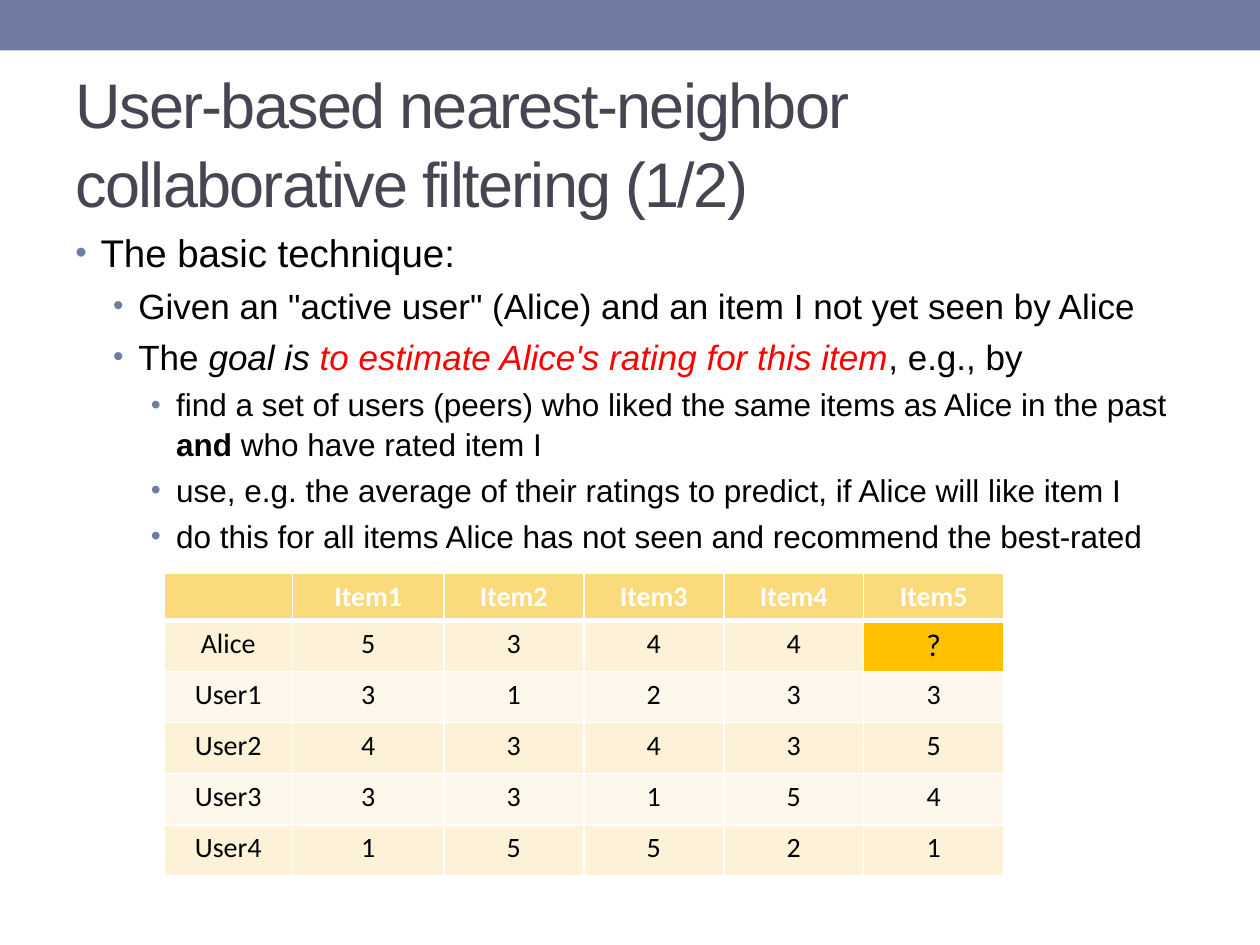
from lxml import etree
from pptx import Presentation
from pptx.dml.color import RGBColor
from pptx.enum import shapes, text
from pptx.oxml import ns
from pptx.util import Pt

ACCENT = "727CA3"
BLACK = "000000"
WHITE = "FFFFFF"
RED = "FF0000"
HEADER, BAND_DARK, BAND_LIGHT, HIGHLIGHT = "FADA7A", "FDF1D7", "FEF8EC", "FFC000"

SIZES = [22, 20, 18]
INDENTS = [14.4, 36, 57.6]
BULLET_SIZES = [85, 85, 90]
BULLETS = [
    (0, [("The basic technique:", {})]),
    (1, [('Given an "active user" (Alice) and an item I not yet seen by Alice', {})]),
    (1, [("The ", {}), ("goal is ", {"italic": True}),
         ("to estimate Alice's rating for this item", {"italic": True, "color": RED}),
         (", e.g., by", {})]),
    (2, [("find a set of users (peers) who liked the same items as Alice in the past ", {}),
         ("and ", {"bold": True}), ("who have rated item I", {})]),
    (2, [("use, e.g. the average of their ratings to predict, if Alice will like item I", {})]),
    (2, [("do this for all items Alice has not seen and recommend the best-rated", {})]),
]
RATINGS = [
    ["", "Item1", "Item2", "Item3", "Item4", "Item5"],
    ["Alice", "5", "3", "4", "4", "?"],
    ["User1", "3", "1", "2", "3", "3"],
    ["User2", "4", "3", "4", "3", "5"],
    ["User3", "3", "3", "1", "5", "4"],
    ["User4", "1", "5", "5", "2", "1"],
]
COLUMN_WIDTHS = [73.6, 86.4, 80, 80, 80, 80]
ROW_HEIGHTS = [27] + [29.2] * 5


def rgb(value):
    return RGBColor.from_string(value)


def sub(parent, tag, **attrs):
    return etree.SubElement(parent, ns.qn(tag), attrs)


def add_text(p, content, size=18, font="Arial", color=BLACK, bold=False,
             italic=False, spacing=None):
    r = p.add_run()
    r.text = content
    r.font.size = Pt(size)
    r.font.name = font
    r.font.bold = bold
    r.font.italic = italic
    r.font.color.rgb = rgb(color)
    if spacing is not None:
        r.font._element.set("spc", str(spacing * 100))


def add_bar(s):
    sp = s.shapes.add_shape(shapes.MSO_SHAPE.RECTANGLE, 0, 0, Pt(720), Pt(28.8))
    sp.shadow.inherit = False
    sp.fill.solid()
    sp.fill.fore_color.rgb = rgb(ACCENT)
    sp.line.fill.background()


def format_title(s):
    sp = s.shapes.title
    sp.left, sp.top, sp.width, sp.height = Pt(36), Pt(41.8), Pt(648), Pt(77.8)
    tf = sp.text_frame
    tf.auto_size = text.MSO_AUTO_SIZE.NONE
    tf.vertical_anchor = text.MSO_ANCHOR.MIDDLE
    p = tf.paragraphs[0]
    p.alignment = text.PP_ALIGN.LEFT
    p.line_spacing = 1.05
    add_text(p, "User-based nearest-neighbor collaborative filtering (1/2)",
             size=36, color="464653", spacing=-1)


def format_bullet(p, level):
    p.level = level
    p.line_spacing = 1.05
    p.space_before = Pt(SIZES[level] * 0.2)
    pPr = p._p.get_or_add_pPr()
    pPr.set("marL", str(Pt(INDENTS[level])))
    pPr.set("indent", str(Pt(-14.4)))
    sub(sub(pPr, "a:buClr"), "a:srgbClr", val=ACCENT)
    sub(pPr, "a:buSzPct", val=str(BULLET_SIZES[level] * 1000))
    sub(pPr, "a:buFont", typeface="Arial")
    sub(pPr, "a:buChar", char="•")


def add_bullets(s):
    tf = s.shapes.add_textbox(Pt(36), Pt(126), Pt(648), Pt(383.8)).text_frame
    tf.word_wrap = True
    for i, (level, runs) in enumerate(BULLETS):
        p = tf.add_paragraph() if i else tf.paragraphs[0]
        format_bullet(p, level)
        for content, style in runs:
            add_text(p, content, size=SIZES[level], **style)


def set_borders(cell, **widths):
    tcPr = cell._tc.get_or_add_tcPr()
    for i, side in enumerate("LRTB"):
        ln = etree.Element(ns.qn(f"a:ln{side}"), w=str(Pt(widths.get(side, 1))))
        sub(sub(ln, "a:solidFill"), "a:srgbClr", val=WHITE)
        tcPr.insert(i, ln)


def fill_color(row, value):
    if row == 0:
        return HEADER
    if value == "?":
        return HIGHLIGHT
    return BAND_DARK if row % 2 else BAND_LIGHT


def add_ratings(s):
    table = s.shapes.add_table(len(RATINGS), len(COLUMN_WIDTHS), Pt(93.6), Pt(327.6),
                               Pt(sum(COLUMN_WIDTHS)), Pt(sum(ROW_HEIGHTS))).table
    for column, width in zip(table.columns, COLUMN_WIDTHS):
        column.width = Pt(width)
    for row, height in zip(table.rows, ROW_HEIGHTS):
        row.height = Pt(height)
    for i, values in enumerate(RATINGS):
        for j, value in enumerate(values):
            cell = table.cell(i, j)
            cell.fill.solid()
            cell.fill.fore_color.rgb = rgb(fill_color(i, value))
            set_borders(cell, T=3 if i == 1 else 1, B=1 if i else 3)
            p = cell.text_frame.paragraphs[0]
            p.alignment = text.PP_ALIGN.CENTER
            if value:
                add_text(p, value, size=18 if value == "?" else 16, font="Calibri",
                         color=BLACK if i else WHITE, bold=i == 0)
            else:
                sub(p._p, "a:endParaRPr", sz="1600")


def main():
    prs = Presentation()
    prs.slide_width, prs.slide_height = Pt(720), Pt(540)
    s = prs.slides.add_slide(prs.slide_layouts[5])
    add_bar(s)
    format_title(s)
    add_bullets(s)
    add_ratings(s)
    prs.save("out.pptx")


if __name__ == "__main__":
    main()
